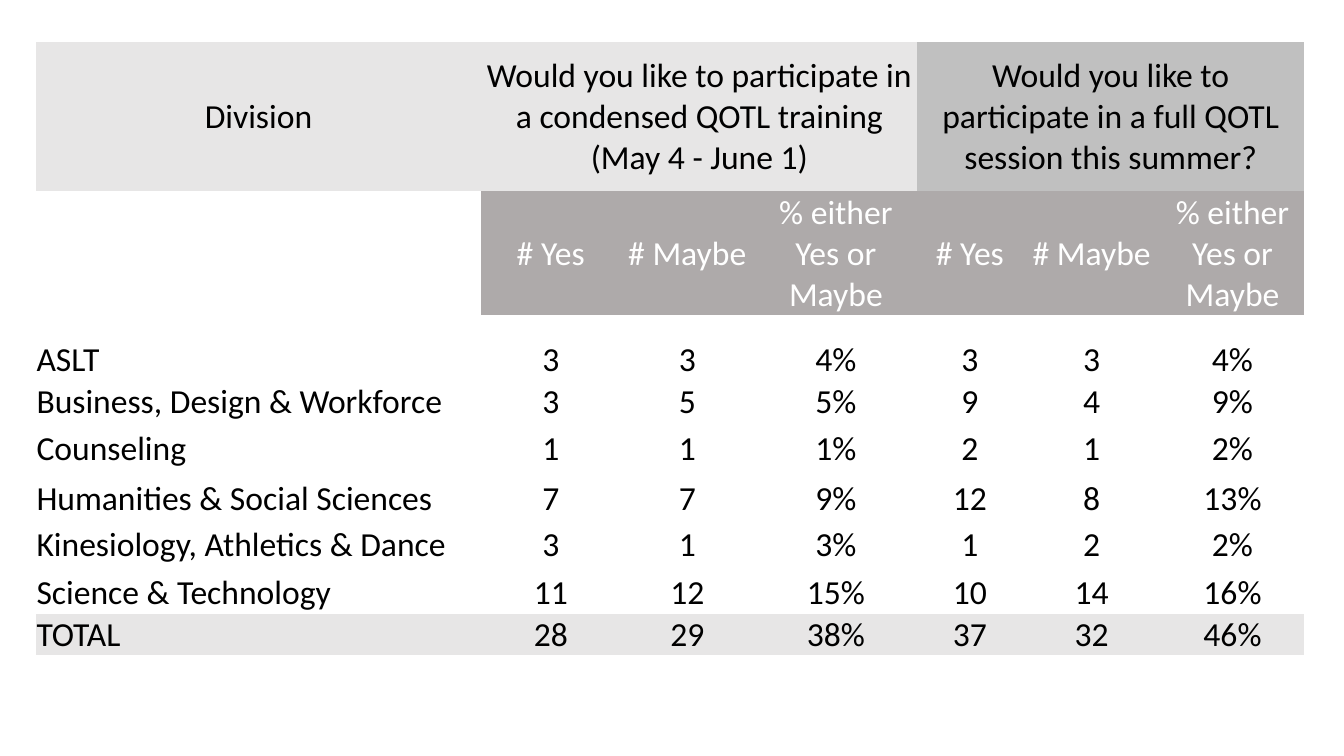
from pptx import Presentation
from pptx.dml.color import RGBColor
from pptx.enum.text import MSO_ANCHOR as Anchor, PP_ALIGN as Align
from pptx.util import Cm, Pt

QUESTIONS = [
    "Would you like to participate in a condensed QOTL training (May 4 - June 1)",
    "Would you like to participate in a full QOTL session this summer?",
]
ANSWERS = ["# Yes", "# Maybe", "% either Yes or Maybe"]
DIVISIONS = [
    ("ASLT", "3", "3", "4%", "3", "3", "4%"),
    ("Business, Design & Workforce", "3", "5", "5%", "9", "4", "9%"),
    ("Counseling", "1", "1", "1%", "2", "1", "2%"),
    ("Humanities & Social Sciences", "7", "7", "9%", "12", "8", "13%"),
    ("Kinesiology, Athletics & Dance", "3", "1", "3%", "1", "2", "2%"),
    ("Science & Technology", "11", "12", "15%", "10", "14", "16%"),
]
TOTAL = ("TOTAL", "28", "29", "38%", "37", "32", "46%")

THEME = {
    "font": "Calibri", "size": Pt(24),
    "text": "000000", "inverse": "FFFFFF",
    "pale": "E7E6E6", "silver": "C0C0C0", "grey": "AEAAAA",
    "table_style": "{2D5ABB26-0587-4C30-8999-92F81FD0307C}",
}
COL_WIDTHS = [11.23, 3.5, 3.38, 4.11, 2.64, 3.5, 3.6]
ROW_HEIGHTS = [3.76, 2.82, 1.65, 1.02, 1.19, 1.27, 1.14, 1.22, 0.94]
LEFT, TOP = 0.9, 1.06
MARGINS = {"margin_left": Cm(0.02), "margin_right": Cm(0.02),
           "margin_top": Cm(0.02), "margin_bottom": Cm(0)}


def set_attrs(obj, values):
    for name, value in values.items():
        setattr(obj, name, value)


def fill_cell(cell, text, fill=None, color="text", align=Align.CENTER, anchor=Anchor.MIDDLE):
    set_attrs(cell, {**MARGINS, "vertical_anchor": anchor})
    if fill:
        cell.fill.solid()
        cell.fill.fore_color.rgb = RGBColor.from_string(THEME[fill])
    else:
        cell.fill.background()
    if not text:
        return
    p = cell.text_frame.paragraphs[0]
    p.alignment = align
    r = p.add_run()
    r.text = text
    set_attrs(r.font, {"name": THEME["font"], "size": THEME["size"]})
    r.font.color.rgb = RGBColor.from_string(THEME[color])


def add_survey_table(slide):
    frame = slide.shapes.add_table(
        len(ROW_HEIGHTS), len(COL_WIDTHS), Cm(LEFT), Cm(TOP),
        Cm(sum(COL_WIDTHS)), Cm(sum(ROW_HEIGHTS)))
    table = frame.table
    set_attrs(table, {"first_row": False, "horz_banding": False})
    frame._element.xpath(".//a:tableStyleId")[0].text = THEME["table_style"]
    for col, width in zip(table.columns, COL_WIDTHS):
        col.width = Cm(width)
    for row, height in zip(table.rows, ROW_HEIGHTS):
        row.height = Cm(height)

    fill_cell(table.cell(0, 0), "Division", "pale")
    fill_cell(table.cell(1, 0), "")
    span = len(ANSWERS)
    for i, (question, fill) in enumerate(zip(QUESTIONS, ("pale", "silver"))):
        first = 1 + i * span
        table.cell(0, first).merge(table.cell(0, first + span - 1))
        fill_cell(table.cell(0, first), question, fill)
        for j, answer in enumerate(ANSWERS):
            fill_cell(table.cell(1, first + j), answer, "grey", "inverse")

    for i, values in enumerate([*DIVISIONS, TOTAL], start=2):
        fill = "pale" if values is TOTAL else None
        for j, value in enumerate(values):
            align = Align.CENTER if j else Align.LEFT
            fill_cell(table.cell(i, j), value, fill, align=align, anchor=Anchor.BOTTOM)


def main():
    prs = Presentation()
    set_attrs(prs, {"slide_width": Cm(33.87), "slide_height": Cm(19.05)})
    add_survey_table(prs.slides.add_slide(prs.slide_layouts[6]))
    prs.save("out.pptx")


if __name__ == "__main__":
    main()
